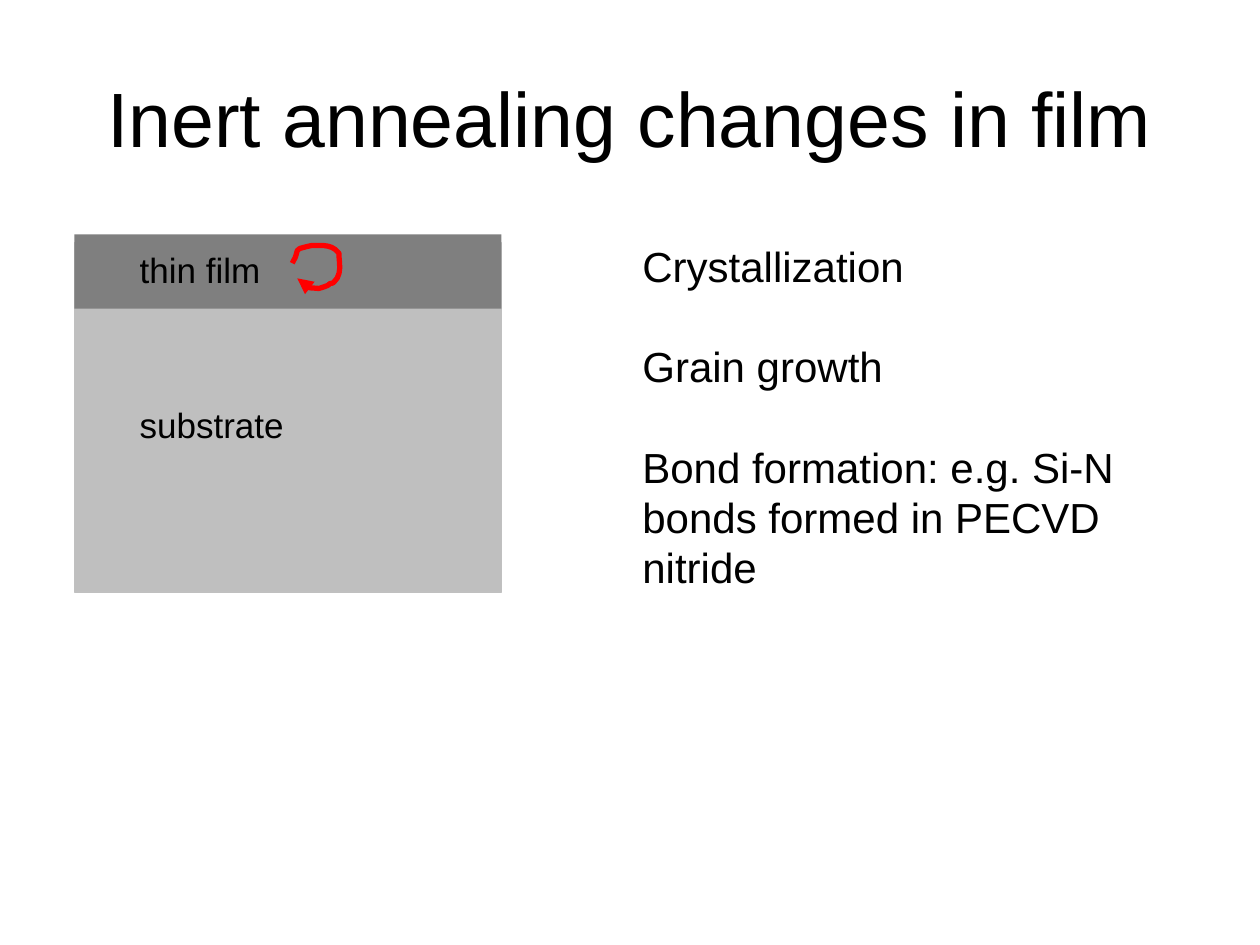
from lxml import etree
from pptx import Presentation
from pptx.dml.color import RGBColor
from pptx.enum.shapes import MSO_SHAPE
from pptx.enum.text import MSO_ANCHOR, PP_ALIGN
from pptx.oxml.ns import qn
from pptx.util import Inches, Pt

RECT = MSO_SHAPE.RECTANGLE
TOP, MID = MSO_ANCHOR.TOP, MSO_ANCHOR.MIDDLE
LEFT, CENTER = PP_ALIGN.LEFT, PP_ALIGN.CENTER

FONT = "Arial"
HUES = {"ink": "000000", "base": "BFBFBF", "edge": "C0C0C0",
        "film": "7F7F7F", "loop": "FF0000"}
TITLE = "Inert annealing changes in film"
EFFECTS = ["Crystallization", "Grain growth",
           "Bond formation: e.g. Si-N bonds formed in PECVD nitride"]
LAYERS = [("base", "edge", None, (0.59, 1.93, 3.39, 2.77)),
          ("film", None, None, (0.59, 1.86, 3.39, 0.59)),
          ("base", None, "substrate", (1.01, 3.15, 2.54, 0.96))]
LABEL = ("thin film", (1.01, 1.92, 2.02, 0.43))
START = (2.32, 2.09)
CURVES = [
    ((2.35, 2.03), (2.34, 2.06), (2.36, 1.99)),
    ((2.37, 1.98), (2.38, 1.97), (2.39, 1.97)),
    ((2.42, 1.96), (2.47, 1.95), (2.47, 1.95)),
    ((2.54, 1.95), (2.61, 1.94), (2.66, 1.98)),
    ((2.67, 1.99), (2.68, 2.0), (2.69, 2.01)),
    ((2.69, 2.08), (2.72, 2.18), (2.65, 2.24)),
    ((2.64, 2.25), (2.63, 2.25), (2.62, 2.25)),
    ((2.61, 2.26), (2.6, 2.27), (2.59, 2.27)),
    ((2.57, 2.28), (2.53, 2.29), (2.53, 2.29)),
    ((2.43, 2.28), (2.48, 2.3), (2.39, 2.24)),
    ((2.36, 2.22), (2.36, 2.23), (2.36, 2.21)),
]
STEPS = 6


def hue(name):
    return RGBColor.from_string(HUES[name])


def place(box):
    return [Inches(n) for n in box]


def write(shape, lines, size, align=LEFT, anchor=TOP, pitch=None, gap=0):
    frame = shape.text_frame
    frame.word_wrap = True
    frame.vertical_anchor = anchor
    for i, line in enumerate(lines):
        para = frame.add_paragraph() if i else frame.paragraphs[0]
        para.alignment = align
        para.space_after = Pt(gap)
        if pitch:
            para.line_spacing = Pt(pitch)
        run = para.add_run()
        run.text = line
        run.font.name = FONT
        run.font.size = Pt(size)
        run.font.color.rgb = hue("ink")


def trace(start, curves):
    points = []
    for one, two, end in curves:
        for step in range(1, STEPS + 1):
            t = step / STEPS
            u = 1 - t
            points.append(tuple(
                Inches(u**3 * a + 3 * u * u * t * b + 3 * u * t * t * c
                       + t**3 * d)
                for a, b, c, d in zip(start, one, two, end)))
        start = end
    return points


deck = Presentation()
deck.slide_width, deck.slide_height = Inches(10), Inches(7.5)
slide = deck.slides.add_slide(deck.slide_layouts[5])
shapes = slide.shapes

title = shapes.title
title.left, title.top, title.width, title.height = place((0.5, 0.3, 9, 1.25))
write(title, [TITLE], 44, CENTER, MID)

stack = shapes.add_group_shape().shapes
for fill, edge, text, box in LAYERS:
    layer = stack.add_shape(RECT, *place(box))
    layer.shadow.inherit = False
    layer.fill.solid()
    layer.fill.fore_color.rgb = hue(fill)
    if edge:
        layer.line.color.rgb = hue(edge)
        layer.line.width = Pt(0.75)
    else:
        layer.line.fill.background()
    if text:
        write(layer, [text], 20, pitch=24, gap=10)
text, box = LABEL
write(stack.add_textbox(*place(box)), [text], 20, pitch=24, gap=10)

pen = shapes.build_freeform(*place(START))
pen.add_line_segments(trace(START, CURVES), close=False)
loop = pen.convert_to_shape()
loop.shadow.inherit = False
loop.fill.background()
loop.line.color.rgb = hue("loop")
loop.line.width = Pt(3)
line = loop.element.spPr.find(qn("a:ln"))
etree.SubElement(line, qn("a:tailEnd"), type="triangle")

write(shapes.add_textbox(*place((5, 1.86, 4.25, 2.93))), EFFECTS, 24,
      pitch=28.6, gap=29)

deck.save("out.pptx")
